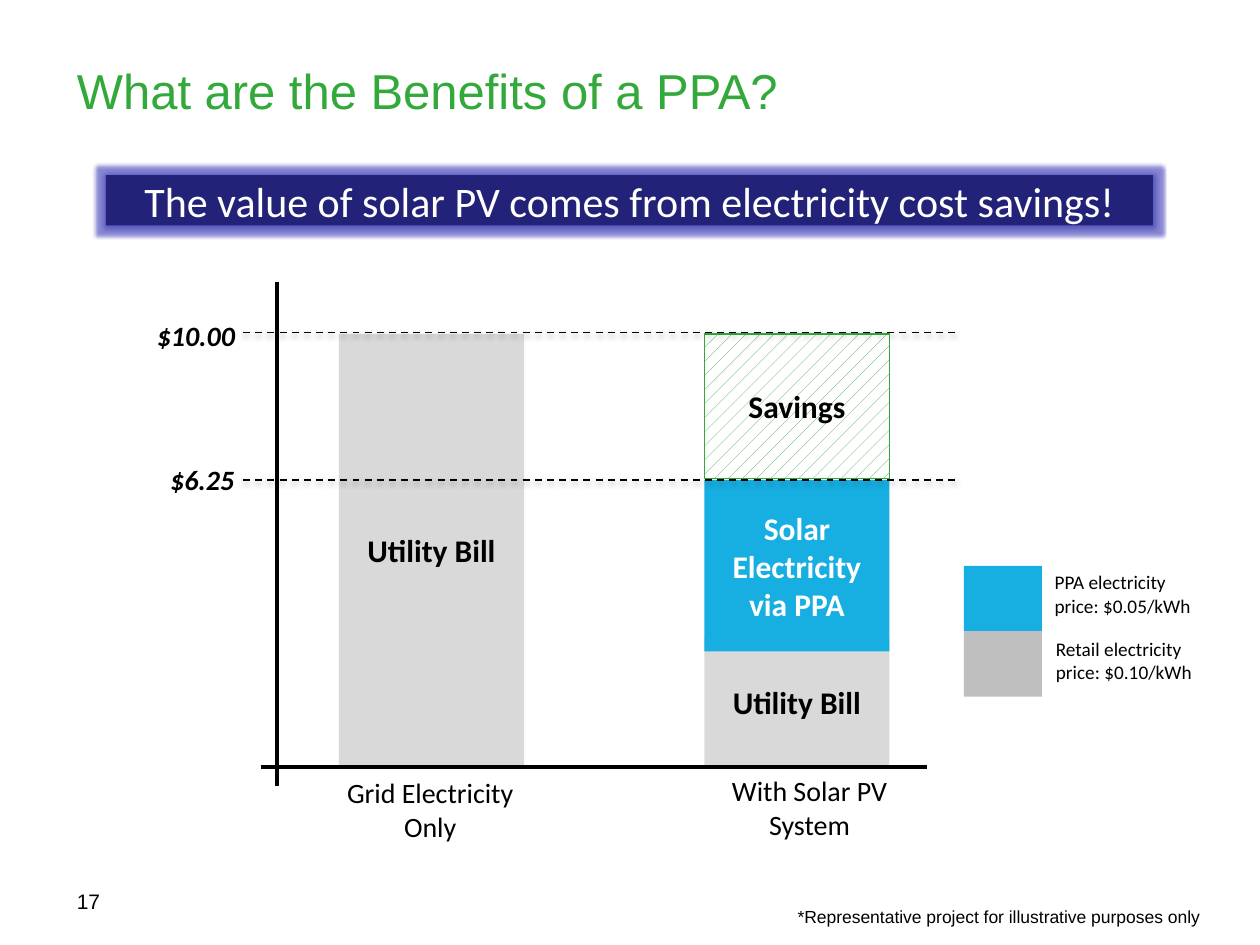
from pptx import Presentation
from pptx.dml.color import RGBColor
from pptx.enum.dml import MSO_LINE, MSO_PATTERN
from pptx.enum.shapes import MSO_CONNECTOR, MSO_SHAPE
from pptx.enum.text import MSO_ANCHOR, MSO_AUTO_SIZE, PP_ALIGN
from pptx.oxml import parse_xml
from pptx.oxml.ns import nsdecls, qn
from pptx.util import Inches, Pt

RECT, LINE = MSO_SHAPE.RECTANGLE, MSO_CONNECTOR.STRAIGHT
DASH, HATCH = MSO_LINE.DASH, MSO_PATTERN.PERCENT_10
TOP, MID = MSO_ANCHOR.TOP, MSO_ANCHOR.MIDDLE
LEFT, MIDDLE = PP_ALIGN.LEFT, PP_ALIGN.CENTER
NONE = MSO_AUTO_SIZE.NONE

BLACK = RGBColor(0x00, 0x00, 0x00)
WHITE = RGBColor(0xFF, 0xFF, 0xFF)
GREEN = RGBColor(0x32, 0xA9, 0x3A)
BLUE = RGBColor(0x17, 0xAE, 0xE1)
NAVY = RGBColor(0x23, 0x22, 0x79)
PALE = RGBColor(0xD9, 0xD9, 0xD9)
GREY = RGBColor(0xBF, 0xBF, 0xBF)

TITLE = "What are the Benefits of a PPA?"
CLAIM = "The value of solar PV comes from electricity cost savings!"
NOTE = "*Representative project for illustrative purposes only"
PAGE = "17"

BAR_W = 1.47
BARS = [
    ("Utility Bill", 2.69, 2.65, 3.43, PALE, BLACK, False),
    ("Utility Bill", 5.59, 5.06, 1.02, PALE, BLACK, False),
    ("Solar Electricity via PPA", 5.59, 3.81, 1.36, BLUE, WHITE, True),
    ("Savings", 5.59, 2.65, 1.15, None, BLACK, True),
]
GROUPS = [("Grid Electricity Only", 2.58, 6.11), ("With Solar PV System", 5.59, 6.09)]
COSTS = [("$10.00", 0.65, 2.48), ("$6.25", 0.7, 3.62)]
AXES = [(2.07, 6.09, 7.36, 6.09), (2.2, 6.24, 2.2, 2.24)]
LEVELS = [2.64, 3.81]
KEYS = [
    ("PPA electricity price: $0.05/kWh", 8.37, 4.53, BLUE),
    ("Retail electricity price: $0.10/kWh", 8.38, 5.06, GREY),
]
KEY_X, KEY_Y, KEY_W, KEY_H = 7.65, 4.49, 0.62, 0.52

GLOW = '<a:glow rad="50800"><a:srgbClr val="3A39B5"><a:alpha val="60000"/></a:srgbClr></a:glow>'
SHADE = ('<a:outerShdw blurRad="39370" dist="20320" dir="5400000" rotWithShape="0">'
         '<a:srgbClr val="000000"><a:alpha val="38000"/></a:srgbClr></a:outerShdw>')


def effect(item, xml=""):
    props = item._element.spPr
    for old in props.findall(qn("a:effectLst")):
        props.remove(old)
    props.append(parse_xml(f'<a:effectLst {nsdecls("a")}>{xml}</a:effectLst>'))


def write(item, text, size, color=BLACK, face="Calibri", align=LEFT,
          anchor=TOP, pad=True, wrap=True, bold=False, slant=False):
    frame = item.text_frame
    frame.text = text
    frame.word_wrap = wrap
    frame.auto_size = NONE
    frame.vertical_anchor = anchor
    frame.margin_left = frame.margin_right = Inches(0.1 if pad else 0)
    frame.margin_top = frame.margin_bottom = Inches(0.05 if pad else 0)
    para = frame.paragraphs[0]
    para.alignment = align
    font = para.font
    font.name, font.size, font.bold, font.italic = face, Pt(size), bold, slant
    font.color.rgb = color


def label(slide, box, text, size, **style):
    write(slide.shapes.add_textbox(*map(Inches, box)), text, size, **style)


def block(slide, box, color):
    rect = slide.shapes.add_shape(RECT, *map(Inches, box))
    rect.shadow.inherit = False
    if color is None:
        rect.fill.patterned()
        rect.fill.pattern = HATCH
        rect.fill.fore_color.rgb = GREEN
        rect.fill.back_color.rgb = WHITE
        rect.line.color.rgb = GREEN
        rect.line.width = Pt(0.75)
    else:
        rect.fill.solid()
        rect.fill.fore_color.rgb = color
        rect.line.fill.background()
    return rect


def rule(slide, ends, width):
    line = slide.shapes.add_connector(LINE, *map(Inches, ends))
    line.line.color.rgb = BLACK
    line.line.width = Pt(width)
    return line


def main():
    deck = Presentation()
    deck.slide_width, deck.slide_height = Inches(10), Inches(7.5)
    slide = deck.slides.add_slide(deck.slide_layouts[5])

    title = slide.shapes.title
    title.left, title.top, title.width, title.height = map(Inches, (0.61, 0.48, 6.35, 0.94))
    write(title, TITLE, 28, GREEN, "Arial", pad=False)
    label(slide, (0.61, 6.95, 2.33, 0.4), PAGE, 12, face="Arial", anchor=MID, pad=False)

    for text, x, y, h, fill, ink, wrap in BARS:
        write(block(slide, (x, y, BAR_W, h), fill), text, 18, ink,
              align=MIDDLE, anchor=MID, wrap=wrap, bold=True)
    for text, x, y in GROUPS:
        label(slide, (x, y, 1.67, 0.64), text, 16, align=MIDDLE)
    for text, x, y in COSTS:
        label(slide, (x, y, 1.81, 0.37), text, 16, align=MIDDLE, bold=True, slant=True)
    for y in LEVELS:
        line = rule(slide, (1.93, y, 7.61, y), 1)
        line.line.dash_style = DASH
        effect(line, SHADE)
    for ends in AXES:
        effect(rule(slide, ends, 2.25))

    for i, (text, x, y, color) in enumerate(KEYS):
        block(slide, (KEY_X, KEY_Y + i * KEY_H, KEY_W, KEY_H), color)
        label(slide, (x, y, 1.2, 0.37), text, 11, pad=False)

    claim = block(slide, (0.84, 1.39, 8.31, 0.4), NAVY)
    effect(claim, GLOW)
    write(claim, CLAIM, 24, WHITE, align=MIDDLE, pad=False)
    label(slide, (6.33, 7.19, 3.4, 0.17), NOTE, 10, face="Arial", pad=False)
    deck.save("out.pptx")


if __name__ == "__main__":
    main()
